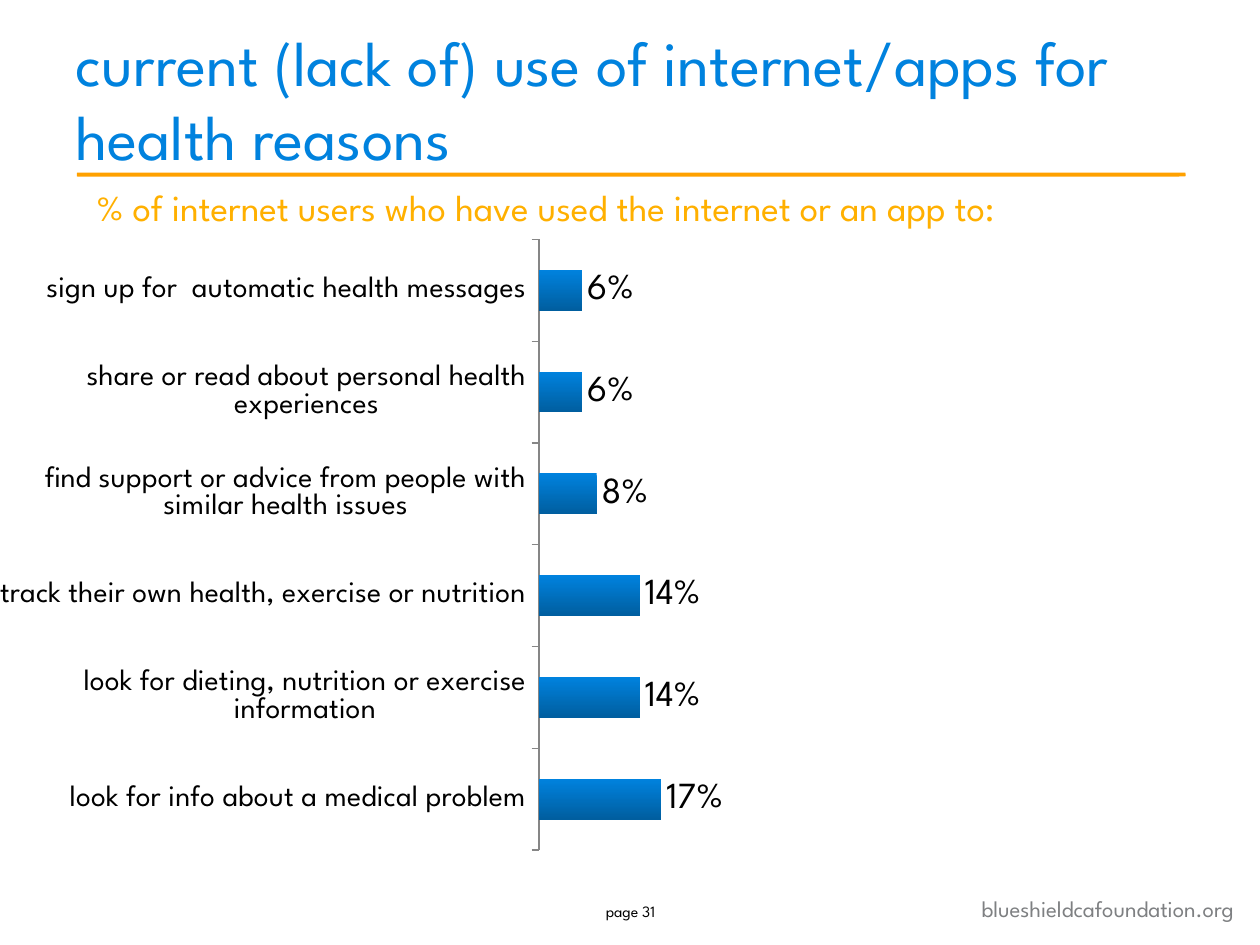
from dataclasses import dataclass

from lxml import etree
from pptx import Presentation
from pptx.chart.data import CategoryChartData
from pptx.dml.color import RGBColor
from pptx.enum.chart import XL_CHART_TYPE, XL_LABEL_POSITION, XL_TICK_LABEL_POSITION, XL_TICK_MARK
from pptx.enum.shapes import MSO_SHAPE
from pptx.enum.text import MSO_ANCHOR, MSO_AUTO_SIZE, PP_ALIGN
from pptx.oxml.ns import qn
from pptx.util import Cm, Pt

BAR_CLUSTERED = XL_CHART_TYPE.BAR_CLUSTERED
OUTSIDE_END = XL_LABEL_POSITION.OUTSIDE_END
LABELS_LOW = XL_TICK_LABEL_POSITION.LOW
TICK_OUTSIDE, TICK_NONE = XL_TICK_MARK.OUTSIDE, XL_TICK_MARK.NONE
ROUNDED = MSO_SHAPE.ROUNDED_RECTANGLE
TOP, MIDDLE, BOTTOM = MSO_ANCHOR.TOP, MSO_ANCHOR.MIDDLE, MSO_ANCHOR.BOTTOM
LEFT, CENTER, RIGHT = PP_ALIGN.LEFT, PP_ALIGN.CENTER, PP_ALIGN.RIGHT
NO_FIT = MSO_AUTO_SIZE.NONE
TITLE_ONLY = 5

USES = [
    ("look for info about a medical problem", 0.17),
    ("look for dieting, nutrition or exercise information", 0.14),
    ("track their own health, exercise or nutrition", 0.14),
    ("find support or advice from people with similar health issues", 0.08),
    ("share or read about personal health experiences", 0.06),
    ("sign up for  automatic health messages", 0.06),
]
PLOT_AREA = {"x": 0.425, "y": 0.044, "w": 0.575, "h": 0.923}


@dataclass(frozen=True)
class Theme:
    font: str = "League Spartan"
    blue: str = "0082DE"
    deep_blue: str = "005E9F"
    rule: str = "FFA100"
    amber: str = "FFB000"
    gray: str = "7E8082"
    axis: str = "868686"
    black: str = "000000"
    title_size: float = 36
    title_leading: float = 42
    subtitle_size: float = 21
    value_size: float = 21
    chart_size: float = 18
    category_size: float = 17
    site_size: float = 13
    page_size: float = 9


class SlideBuilder:
    def __init__(self, deck, theme):
        self.theme = theme
        self.page = deck.slides.add_slide(deck.slide_layouts[TITLE_ONLY])

    def style_font(self, font, size, color):
        font.name = self.theme.font
        font.size = Pt(size)
        font.bold = False
        font.color.rgb = RGBColor.from_string(color)

    def fill_text(self, box, text, size, color, align, anchor):
        frame = box.text_frame
        frame.text = text
        frame.word_wrap = True
        frame.auto_size = NO_FIT
        frame.vertical_anchor = anchor
        para = frame.paragraphs[0]
        para.alignment = align
        for span in para.runs:
            self.style_font(span.font, size, color)
        return para

    def title(self, text, left, top, width, height):
        box = self.page.shapes.title
        box.left, box.top, box.width, box.height = left, top, width, height
        para = self.fill_text(box, text, self.theme.title_size, self.theme.blue, LEFT, BOTTOM)
        para.line_spacing = Pt(self.theme.title_leading)

    def text(self, text, left, top, width, height, size, color, align=LEFT, anchor=TOP):
        box = self.page.shapes.add_textbox(left, top, width, height)
        self.fill_text(box, text, size, color, align, anchor)

    def rule(self, left, top, width, height):
        bar = self.page.shapes.add_shape(ROUNDED, left, top, width, height)
        bar.shadow.inherit = False
        bar.fill.solid()
        bar.fill.fore_color.rgb = RGBColor.from_string(self.theme.rule)
        bar.line.fill.background()

    def bar_chart(self, rows, left, top, width, height):
        theme = self.theme
        data = CategoryChartData(number_format="0%")
        data.categories = [name for name, _ in rows]
        data.add_series("Series 1", [share for _, share in rows])
        chart = self.page.shapes.add_chart(BAR_CLUSTERED, left, top, width, height, data).chart
        chart.has_legend = False
        chart.has_title = False
        self.style_font(chart.font, theme.chart_size, theme.black)

        categories = chart.category_axis
        categories.major_tick_mark = TICK_OUTSIDE
        categories.minor_tick_mark = TICK_NONE
        categories.tick_label_position = LABELS_LOW
        categories.format.line.color.rgb = RGBColor.from_string(theme.axis)
        self.style_font(categories.tick_labels.font, theme.category_size, theme.black)

        values = chart.value_axis
        values.minimum_scale, values.maximum_scale = 0, 1
        values.has_major_gridlines = False
        values.visible = False

        plot = chart.plots[0]
        plot.gap_width = 150
        plot.vary_by_categories = False
        plot.has_data_labels = True
        labels = plot.data_labels
        labels.show_value = True
        labels.position = OUTSIDE_END
        labels.number_format = "0%"
        labels.number_format_is_linked = False
        self.style_font(labels.font, theme.value_size, theme.black)

        fill = plot.series[0].format.fill
        fill.gradient()
        fill.gradient_angle = 270
        for stop, color in zip(fill.gradient_stops, (theme.blue, theme.deep_blue)):
            stop.color.rgb = RGBColor.from_string(color)
        self.place_plot(chart, PLOT_AREA)

    def place_plot(self, chart, area):
        """Fix the inner plot area, given as fractions of the chart."""
        plot_area = chart._chartSpace.chart.plotArea
        for old in plot_area.findall(qn("c:layout")):
            plot_area.remove(old)
        layout = etree.Element(qn("c:layout"))
        plot_area.insert(0, layout)
        manual = etree.SubElement(layout, qn("c:manualLayout"))
        settings = [("layoutTarget", "inner"), ("xMode", "edge"), ("yMode", "edge")]
        for tag, value in settings + list(area.items()):
            etree.SubElement(manual, qn(f"c:{tag}")).set("val", str(value))


def main():
    deck = Presentation()
    deck.slide_width, deck.slide_height = Cm(25.4), Cm(19.05)
    theme = Theme()
    slide = SlideBuilder(deck, theme)
    slide.text("blueshieldcafoundation.org", Cm(18.29), Cm(17.91), Cm(6.83), Cm(0.81),
               theme.site_size, theme.gray, align=RIGHT)
    slide.rule(Cm(1.55), Cm(3.48), Cm(22.35), Cm(0.08))
    slide.title("current (lack of) use of internet/apps for health reasons",
                Cm(1.27), Cm(0.64), Cm(22.86), Cm(2.97))
    slide.bar_chart(USES, Cm(0), Cm(4.24), Cm(25.4), Cm(13.34))
    slide.text("page 31", Cm(11.58), Cm(17.7), Cm(2.26), Cm(1.32),
               theme.page_size, theme.black, align=CENTER, anchor=MIDDLE)
    slide.text("% of internet users who have used the internet or an app to:",
               Cm(1.7), Cm(3.61), Cm(22.23), Cm(1.14), theme.subtitle_size, theme.amber)
    deck.save("out.pptx")


if __name__ == "__main__":
    main()
